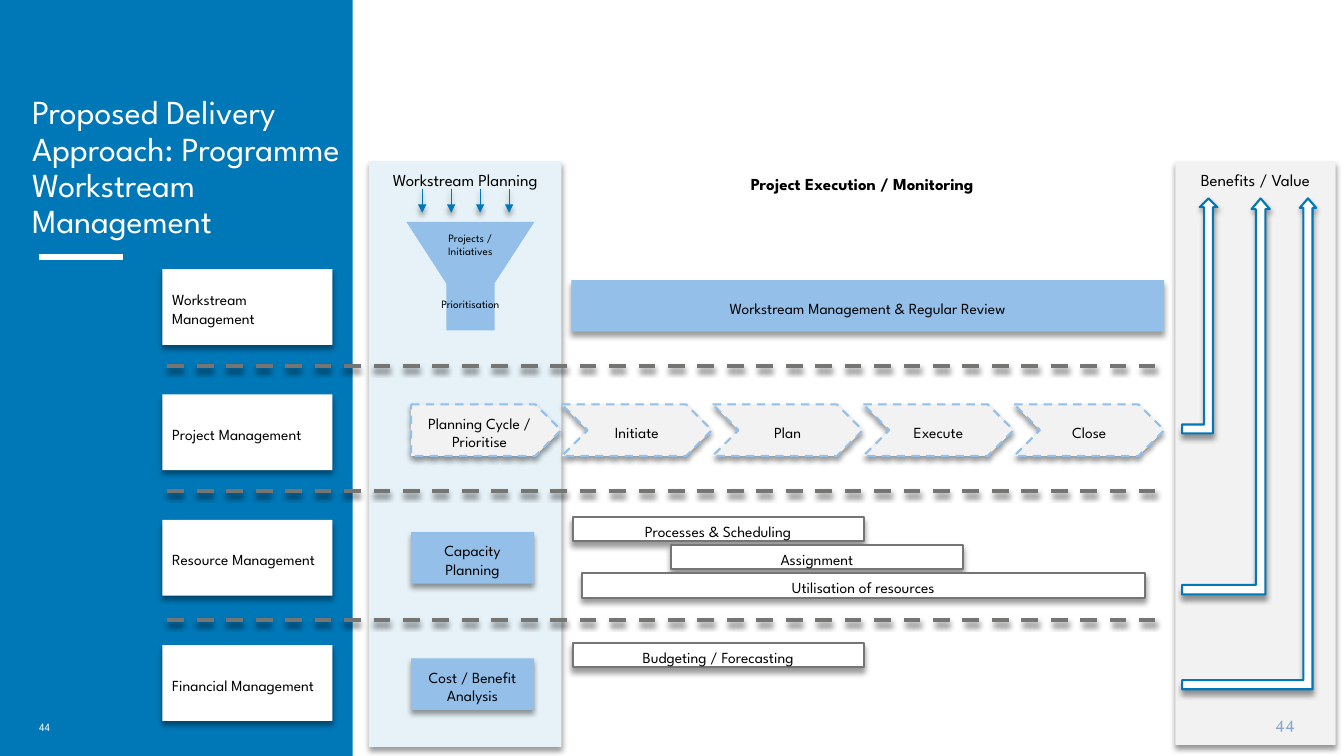
from dataclasses import dataclass
from typing import Any, Optional

import lxml.etree
import pptx
import pptx.dml.color
import pptx.enum.dml
import pptx.enum.shapes
import pptx.enum.text
import pptx.oxml.ns
import pptx.util

Cm = pptx.util.Cm
Pt = pptx.util.Pt
SHAPE = pptx.enum.shapes.MSO_SHAPE
ALIGN = pptx.enum.text.PP_ALIGN
ANCHOR = pptx.enum.text.MSO_ANCHOR
qn = pptx.oxml.ns.qn

FONT = "League Spartan"
COLORS = {
    "blue": "0077B7",
    "sky": "93BFE8",
    "pale": "E6F2F8",
    "light": "F2F2F2",
    "gray": "757574",
    "white": "FFFFFF",
    "black": "000000",
    "number": "8CA7CC",
}


@dataclass
class Box:
    left: float
    top: float
    width: float
    height: float
    text: str = ""
    fill: str = "white"
    line: Optional[str] = None
    dashed: bool = False
    kind: Any = SHAPE.RECTANGLE
    size: float = 11
    align: Any = ALIGN.CENTER
    anchor: Any = ANCHOR.MIDDLE
    shadow: bool = True
    adjustments: tuple[float, ...] = ()


@dataclass
class Label:
    left: float
    top: float
    width: float
    height: float
    text: str
    size: float
    color: str = "white"
    font: str = FONT
    bold: bool = False
    align: Any = ALIGN.LEFT
    anchor: Any = ANCHOR.TOP
    margin: float = 0
    spacing: float = 1


@dataclass
class Rule:
    x1: float
    y1: float
    x2: float
    y2: float
    color: str
    width: float
    dashed: bool = False
    arrow: bool = False
    shadow: bool = True


def rgb(name: str) -> pptx.dml.color.RGBColor:
    return pptx.dml.color.RGBColor.from_string(COLORS[name])


def add_shadow(effects: Any) -> None:
    shadow = lxml.etree.SubElement(
        effects, qn("a:outerShdw"), blurRad=str(Pt(4)), dist=str(Pt(3)),
        dir="5400000", algn="t", rotWithShape="0")
    color = lxml.etree.SubElement(shadow, qn("a:srgbClr"), val=COLORS["black"])
    lxml.etree.SubElement(color, qn("a:alpha"), val="40000")


def style_text(p: Any, size: float, color: str, align: Any,
               font: str = FONT, bold: bool = False) -> None:
    p.alignment = align
    for r in p.runs:
        r.font.name = font
        r.font.size = Pt(size)
        r.font.bold = bold
        r.font.color.rgb = rgb(color)


def add_box(slide: Any, box: Box) -> Any:
    sp = slide.shapes.add_shape(
        box.kind, Cm(box.left), Cm(box.top), Cm(box.width), Cm(box.height))
    for i, value in enumerate(box.adjustments):
        sp.adjustments[i] = value
    sp.fill.solid()
    sp.fill.fore_color.rgb = rgb(box.fill)
    if box.line:
        sp.line.color.rgb = rgb(box.line)
        sp.line.width = Pt(1.5)
        if box.dashed:
            sp.line.dash_style = pptx.enum.dml.MSO_LINE.DASH
    else:
        sp.line.fill.background()
    sp.shadow.inherit = False
    if box.shadow:
        add_shadow(sp._element.spPr.find(qn("a:effectLst")))
    if box.text:
        tf = sp.text_frame
        tf.word_wrap = True
        tf.vertical_anchor = box.anchor
        tf.margin_top = Cm(0.23)
        tf.text = box.text
        for p in tf.paragraphs:
            style_text(p, box.size, "black", box.align)
    return sp


def add_label(slide: Any, label: Label) -> None:
    sp = slide.shapes.add_textbox(
        Cm(label.left), Cm(label.top), Cm(label.width), Cm(label.height))
    tf = sp.text_frame
    tf.word_wrap = True
    tf.vertical_anchor = label.anchor
    tf.margin_left = tf.margin_right = Cm(label.margin)
    tf.margin_top = tf.margin_bottom = Cm(label.margin / 2)
    tf.text = label.text
    p = tf.paragraphs[0]
    p.line_spacing = label.spacing
    style_text(p, label.size, label.color, label.align, label.font, label.bold)


def add_rule(slide: Any, rule: Rule) -> None:
    cxn = slide.shapes.add_connector(
        pptx.enum.shapes.MSO_CONNECTOR.STRAIGHT,
        Cm(rule.x1), Cm(rule.y1), Cm(rule.x2), Cm(rule.y2))
    cxn.line.color.rgb = rgb(rule.color)
    cxn.line.width = Pt(rule.width)
    if rule.dashed:
        cxn.line.dash_style = pptx.enum.dml.MSO_LINE.DASH
    if rule.arrow:
        lxml.etree.SubElement(cxn.line._get_or_add_ln(), qn("a:tailEnd"), type="triangle")
    effects = lxml.etree.SubElement(cxn._element.spPr, qn("a:effectLst"))
    if rule.shadow:
        add_shadow(effects)


def add_funnel(slide: Any) -> None:
    add_box(slide, Box(11.25, 7.16, 1.22, 1.17, fill="sky", shadow=False))
    sp = add_box(slide, Box(10.24, 5.59, 3.23, 2.49, "Projects / Initiatives\nPrioritisation",
                            "sky", kind=SHAPE.FLOWCHART_MERGE, size=8,
                            anchor=ANCHOR.TOP, shadow=False))
    tf = sp.text_frame
    tf.margin_left = tf.margin_right = 0
    tf.paragraphs[1].space_before = Pt(28)


def main() -> None:
    prs = pptx.Presentation()
    prs.slide_width, prs.slide_height = Cm(33.87), Cm(19.05)
    slide = prs.slides.add_slide(prs.slide_layouts[6])
    slide.background.fill.solid()
    slide.background.fill.fore_color.rgb = rgb("blue")

    add_box(slide, Box(8.89, 0, 24.98, 19.05, shadow=False))
    add_rule(slide, Rule(0.99, 6.48, 3.1, 6.48, "white", 4.5, shadow=False))
    add_label(slide, Label(0.81, 0.91, 7.8, 5.16,
                           "Proposed Delivery Approach: Programme Workstream Management",
                           24, anchor=ANCHOR.BOTTOM, spacing=0.9))

    add_box(slide, Box(9.3, 4.06, 4.85, 14.76, "Workstream Planning", "pale",
                       size=12, anchor=ANCHOR.TOP))
    add_box(slide, Box(29.62, 4.06, 4.04, 14.71, "Benefits / Value", "light",
                       size=12, anchor=ANCHOR.TOP))
    add_label(slide, Label(17.02, 4.37, 9.42, 0.51, "Project Execution / Monitoring",
                           12, "black", bold=True, align=ALIGN.CENTER))

    for i, area in enumerate(("Workstream", "Project", "Resource", "Financial")):
        add_box(slide, Box(4.09, 6.78 + 3.16 * i, 4.29, 1.91, f"{area} Management",
                           align=ALIGN.LEFT))
    for i in range(4):
        x = 10.64 + 0.73 * i
        add_rule(slide, Rule(x, 4.75, x, 5.36, "blue", 0.75, arrow=True))
    add_funnel(slide)

    phases = ("Planning Cycle / Prioritise", "Initiate", "Plan", "Execute", "Close")
    for i, phase in enumerate(phases):
        add_box(slide, Box(10.36 + 3.8 * i, 10.19, 3.78, 1.3, phase, "light", "sky", True,
                           SHAPE.CHEVRON if i else SHAPE.PENTAGON))

    for box in (
        Box(14.4, 7.06, 14.94, 1.3, "Workstream Management & Regular Review", "sky"),
        Box(10.36, 13.41, 3.1, 1.3, "Capacity Planning", "sky"),
        Box(10.36, 16.59, 3.1, 1.3, "Cost / Benefit Analysis", "sky"),
        Box(14.43, 13.03, 7.34, 0.61, "Processes & Scheduling", line="gray"),
        Box(16.92, 13.74, 7.34, 0.61, "Assignment", line="gray"),
        Box(14.66, 14.45, 14.2, 0.61, "Utilisation of resources", line="gray"),
        Box(14.43, 16.21, 7.34, 0.61, "Budgeting / Forecasting", line="gray"),
    ):
        add_box(slide, box)

    for y in (9.22, 12.37, 15.62):
        add_rule(slide, Rule(4.22, y, 29.11, y, "gray", 3, dashed=True))
    for width, height, adjustments in (
        (0.89, 5.92, ()),
        (2.21, 9.98, (0.109, 0.104, 0.123)),
        (3.38, 12.37, (0.068, 0.061, 0.071)),
    ):
        add_box(slide, Box(29.79, 5, width, height, line="blue",
                           kind=SHAPE.BENT_UP_ARROW, adjustments=adjustments))

    add_label(slide, Label(0.99, 18.14, 4.75, 0.46, "44", 8))
    add_label(slide, Label(25.27, 17.7, 7.62, 1.02, "44", 12, "number", "Vollkorn",
                           align=ALIGN.RIGHT, anchor=ANCHOR.MIDDLE, margin=0.25))
    prs.save("out.pptx")


if __name__ == "__main__":
    main()
